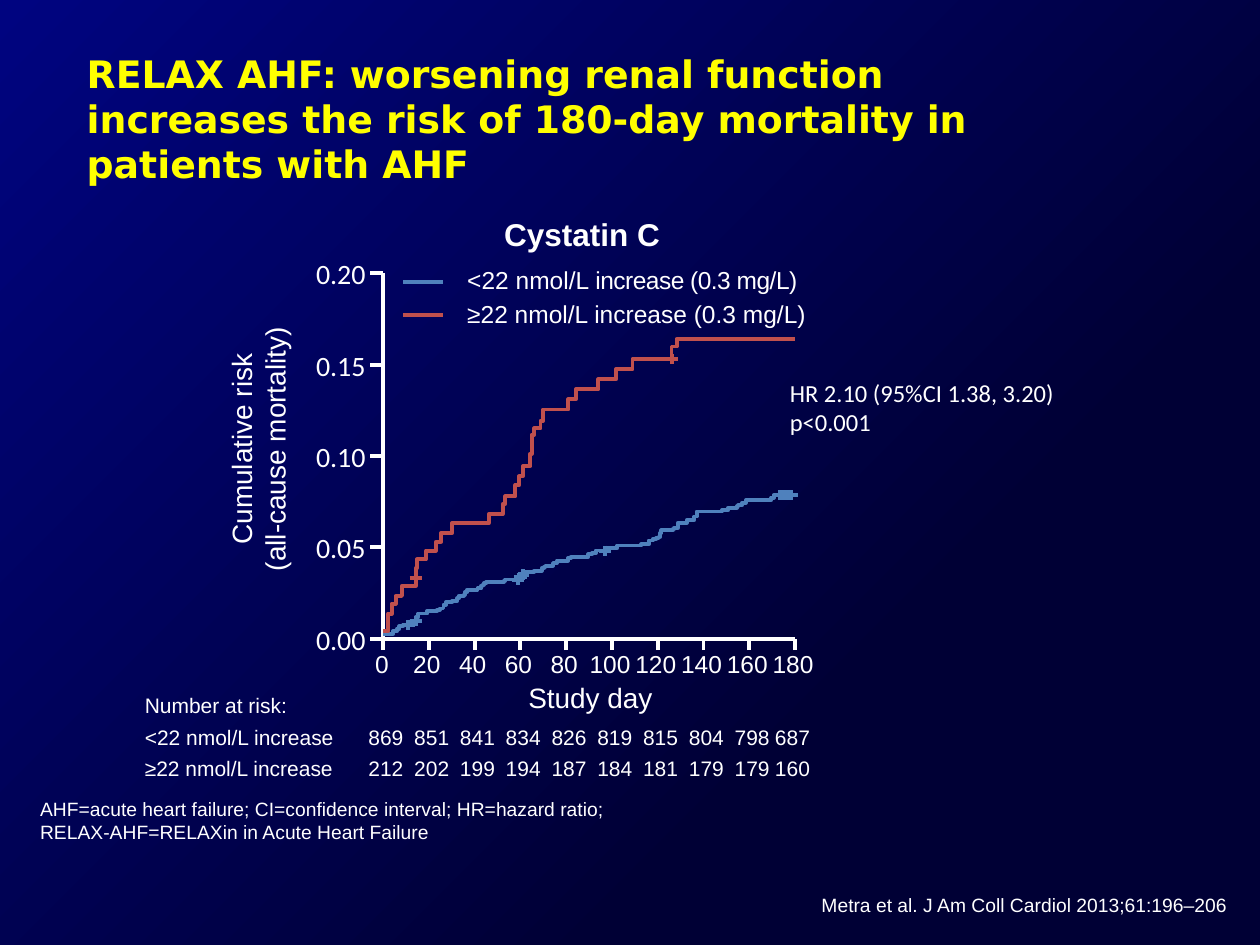
from lxml import etree
from pptx import Presentation
from pptx.dml.color import RGBColor
from pptx.enum.shapes import MSO_CONNECTOR, MSO_SHAPE
from pptx.enum.text import MSO_ANCHOR, PP_ALIGN
from pptx.oxml.ns import qn
from pptx.util import Inches, Pt

LEFT, CENTER, RIGHT = PP_ALIGN.LEFT, PP_ALIGN.CENTER, PP_ALIGN.RIGHT
TOP = MSO_ANCHOR.TOP
STRAIGHT = MSO_CONNECTOR.STRAIGHT
RECTANGLE = MSO_SHAPE.RECTANGLE

# The slide is a grid of 1000 columns by 750 rows.
CELL = Inches(0.01)
COLUMNS, ROWS = 1000, 750

WHITE, YELLOW = "FFFFFF", "FFFF00"
BLUE, RED = "4F81BD", "C0504D"
NIGHT, ROYAL = "000035", "000480"

AXIS_LEFT, AXIS_RIGHT = 304, 631
AXIS_TOP, AXIS_BOTTOM = 217, 507
DAYS = range(0, 181, 20)
RISKS = ["0.00", "0.05", "0.10", "0.15", "0.20"]
DAY_STEP = (AXIS_RIGHT - AXIS_LEFT) / (len(DAYS) - 1)
RISK_STEP = (AXIS_BOTTOM - AXIS_TOP) / (len(RISKS) - 1)

# Each pair is the column where a curve rises and the row it rises to.
LOW_START = 503
LOW_RISES = [
    (312, 501), (315, 499), (317, 497), (320, 496), (324, 494), (327, 493),
    (330, 490), (332, 487), (339, 485), (347, 484), (349, 483), (352, 480),
    (354, 478), (359, 477), (363, 475), (364, 473), (368, 472), (369, 470),
    (371, 468), (379, 467), (382, 465), (383, 464), (384, 463), (386, 462),
    (400, 461), (401, 460), (411, 459), (413, 458), (414, 456), (415, 454),
    (424, 453), (430, 451), (432, 450), (433, 449), (439, 447), (442, 445),
    (451, 443), (453, 442), (467, 440), (470, 439), (473, 437), (482, 435),
    (490, 433), (509, 432), (515, 429), (518, 428), (521, 427), (523, 426),
    (524, 423), (525, 421), (534, 420), (535, 419), (538, 415), (545, 413),
    (551, 410), (553, 406), (573, 405), (578, 403), (585, 402), (586, 401),
    (589, 399), (592, 397), (612, 395), (614, 393),
]
LOW_END = 624
LOW_CENSORED = [(324, 496), (330, 493), (411, 460), (413, 458), (415, 456), (480, 437),
                (619, 393), (621, 393), (624, 393), (626, 393), (628, 393)]
HIGH_START = 501
HIGH_RISES = [
    (308, 487), (311, 479), (314, 473), (319, 465), (330, 451), (331, 444),
    (338, 437), (346, 430), (350, 423), (359, 415), (388, 408), (399, 400),
    (401, 394), (409, 385), (412, 378), (415, 370), (421, 360), (422, 345),
    (424, 340), (429, 334), (431, 325), (451, 317), (457, 309), (475, 301),
    (489, 293), (502, 285), (533, 275), (537, 269),
]
HIGH_CENSORED = [(330, 459), (533, 285)]

AT_RISK = [
    ("<22 nmol/L increase", [869, 851, 841, 834, 826, 819, 815, 804, 798, 687]),
    ("≥22 nmol/L increase", [212, 202, 199, 194, 187, 184, 181, 179, 179, 160]),
]


def cells(count):
    return round(count * CELL)


def rgb(color):
    return RGBColor.from_string(color)


def add_background(slide):
    backdrop = slide.shapes.add_shape(RECTANGLE, 0, 0, cells(COLUMNS), cells(ROWS))
    backdrop.shadow.inherit = False
    backdrop.line.fill.background()
    backdrop.fill.gradient()
    backdrop.fill.gradient_angle = 315
    for stop, position, color in zip(backdrop.fill.gradient_stops, (0, 0.7), (ROYAL, NIGHT)):
        stop.position = position
        stop.color.rgb = rgb(color)


def add_center_tabs(paragraph, stops):
    tabs = etree.SubElement(paragraph._p.get_or_add_pPr(), qn("a:tabLst"))
    for stop in stops:
        etree.SubElement(tabs, qn("a:tab"), pos=str(cells(stop)), algn="ctr")


def add_text(slide, place, paragraphs, size, font="Arial", color=WHITE, bold=False,
             align=LEFT, after=0, tabs=(), wrap=True, inset=10, rotation=0):
    """Write paragraphs, each a list of (text, letter spacing in points) runs."""
    box = slide.shapes.add_textbox(*map(cells, place))
    box.rotation = rotation
    frame = box.text_frame
    frame.word_wrap = wrap
    frame.vertical_anchor = TOP
    frame.margin_left = cells(inset)
    for index, runs in enumerate(paragraphs):
        paragraph = frame.add_paragraph() if index else frame.paragraphs[0]
        if tabs:
            add_center_tabs(paragraph, tabs)
        paragraph.alignment = align
        paragraph.space_after = Pt(after)
        for text, spacing in runs:
            for number, line in enumerate(text.split("\n")):
                if number:
                    paragraph.add_line_break()
                run = paragraph.add_run()
                run.text = line
                run.font.size = Pt(size)
                run.font.name = font
                run.font.bold = bold
                run.font.color.rgb = rgb(color)
                if spacing:
                    run._r.get_or_add_rPr().set("spc", str(round(spacing * 100)))


def plain(*texts):
    return [[(text, 0)] for text in texts]


def add_line(slide, start, end, color):
    line = slide.shapes.add_connector(STRAIGHT, *map(cells, start + end))
    line.line.color.rgb = rgb(color)
    line.line.width = Pt(2.25)
    etree.SubElement(line._element.spPr, qn("a:effectLst"))


def add_path(slide, points, color):
    builder = slide.shapes.build_freeform(*points[0], scale=CELL)
    builder.add_line_segments(points[1:], close=False)
    path = builder.convert_to_shape()
    path.shadow.inherit = False
    path.fill.background()
    path.line.color.rgb = rgb(color)
    path.line.width = Pt(2.25)


def add_risk_curve(slide, start, rises, end, censored, color):
    """Draw a stepped curve with a cross at each censored point."""
    points = [(AXIS_LEFT, start)]
    for column, row in rises:
        points += [(column, points[-1][1]), (column, row)]
    points.append((end, points[-1][1]))
    add_path(slide, points, color)
    for column, row in censored:
        add_line(slide, (column, row - 4), (column, row + 4), color)
        add_line(slide, (column - 5, row), (column + 5, row), color)


def add_axes(slide):
    add_path(slide, [(AXIS_LEFT, AXIS_TOP), (AXIS_LEFT, AXIS_BOTTOM),
                     (AXIS_RIGHT, AXIS_BOTTOM)], WHITE)
    for index in range(len(DAYS)):
        column = AXIS_LEFT + index * DAY_STEP
        add_line(slide, (column, AXIS_BOTTOM + 9), (column, AXIS_BOTTOM), WHITE)
    for index, risk in enumerate(RISKS):
        row = AXIS_BOTTOM - index * RISK_STEP
        add_line(slide, (AXIS_LEFT - 10, row), (AXIS_LEFT, row), WHITE)
        add_text(slide, (240, row - 18, 60, 37), plain(risk), 16, "Calibri",
                 align=RIGHT, wrap=False)
    day_tabs = [41 + index * DAY_STEP for index in range(len(DAYS) - 1)]
    add_text(slide, (288, 510, 393, 40), plain("\t".join(map(str, DAYS))), 14, tabs=day_tabs)
    add_text(slide, (304, 535, 329, 37), plain("Study day"), 16, align=CENTER)
    add_text(slide, (50, 335, 289, 43), plain("Cumulative risk\n(all-cause mortality)"), 16,
             align=CENTER, rotation=270)


def add_legend(slide):
    for row, color in ((224, BLUE), (250, RED)):
        add_line(slide, (320, row), (352, row), color)
    labels = [[("<22 nmol/L ", 0), ("increase (0.3 mg/L)", -0.3)],
              [("≥22 nmol/L increase (0.3 mg/L)", 0)]]
    add_text(slide, (361, 205, 306, 61), labels, 14, after=3)


def add_numbers_at_risk(slide):
    lines = [label + "\t\t" + "\t".join(map(str, counts)) for label, counts in AT_RISK]
    tabs = [155 + index * DAY_STEP for index in range(len(DAYS))] + [514]
    add_text(slide, (115, 545, 573, 79), plain("Number at risk:", *lines), 12,
             after=3.6, tabs=tabs, inset=0)


def main():
    deck = Presentation()
    deck.slide_width, deck.slide_height = cells(COLUMNS), cells(ROWS)
    slide = deck.slides.add_slide(deck.slide_layouts[6])
    add_background(slide)
    add_text(slide, (59, 35, 797, 87),
             plain("RELAX AHF: worsening renal function increases the risk of "
                   "180-day mortality in patients with AHF"),
             21.6, "DejaVu Sans", YELLOW, bold=True)
    add_text(slide, (282, 166, 360, 40), plain("Cystatin C"), 18, bold=True, align=CENTER)
    add_axes(slide)
    add_risk_curve(slide, LOW_START, LOW_RISES, LOW_END, LOW_CENSORED, BLUE)
    add_risk_curve(slide, HIGH_START, HIGH_RISES, AXIS_RIGHT, HIGH_CENSORED, RED)
    add_legend(slide)
    add_text(slide, (617, 295, 291, 57), plain("HR 2.10 (95%CI 1.38, 3.20)", "p<0.001"),
             14, "Calibri")
    add_numbers_at_risk(slide)
    add_text(slide, (22, 628, 484, 47),
             plain("AHF=acute heart failure; CI=confidence interval; HR=hazard ratio;\n"
                   "RELAX-AHF=RELAXin in Acute Heart Failure"), 11)
    add_text(slide, (616, 704, 368, 29),
             plain("Metra et al. J Am Coll Cardiol 2013;61:196–206"), 11, align=RIGHT)
    deck.save("out.pptx")


if __name__ == "__main__":
    main()
